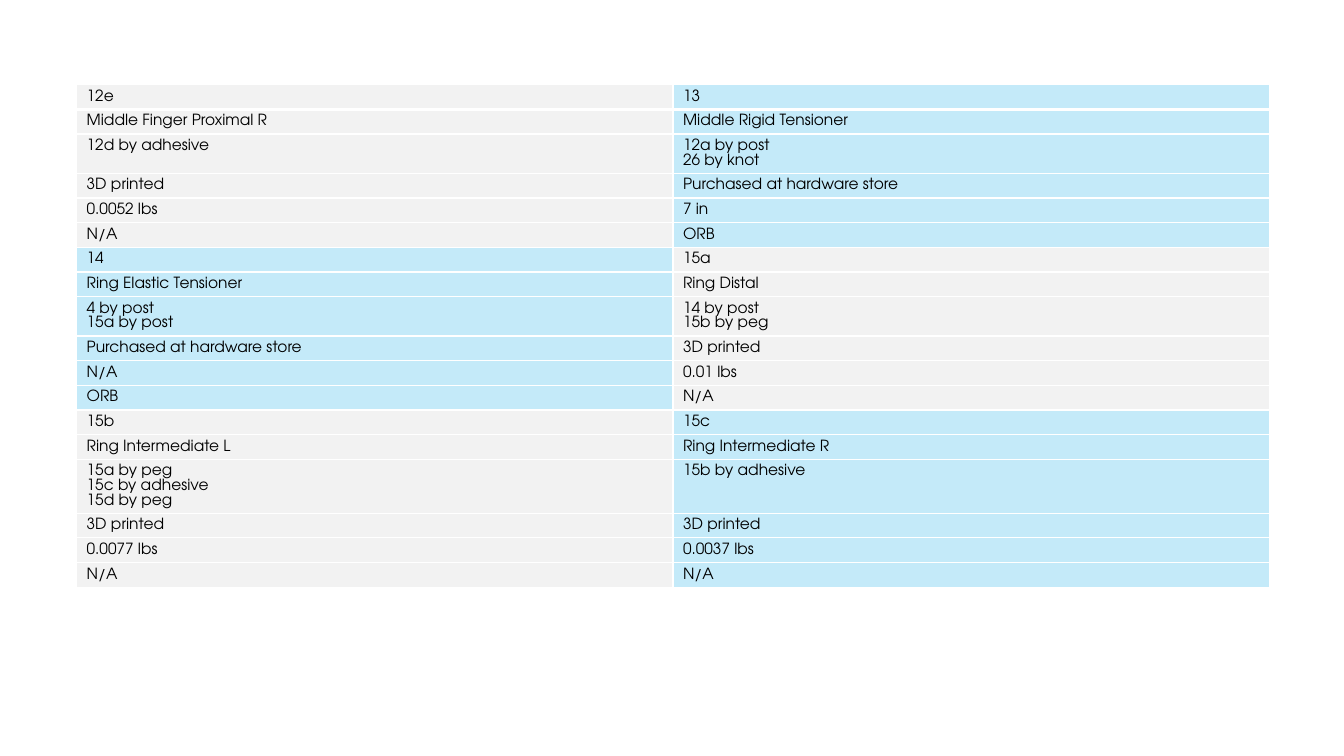
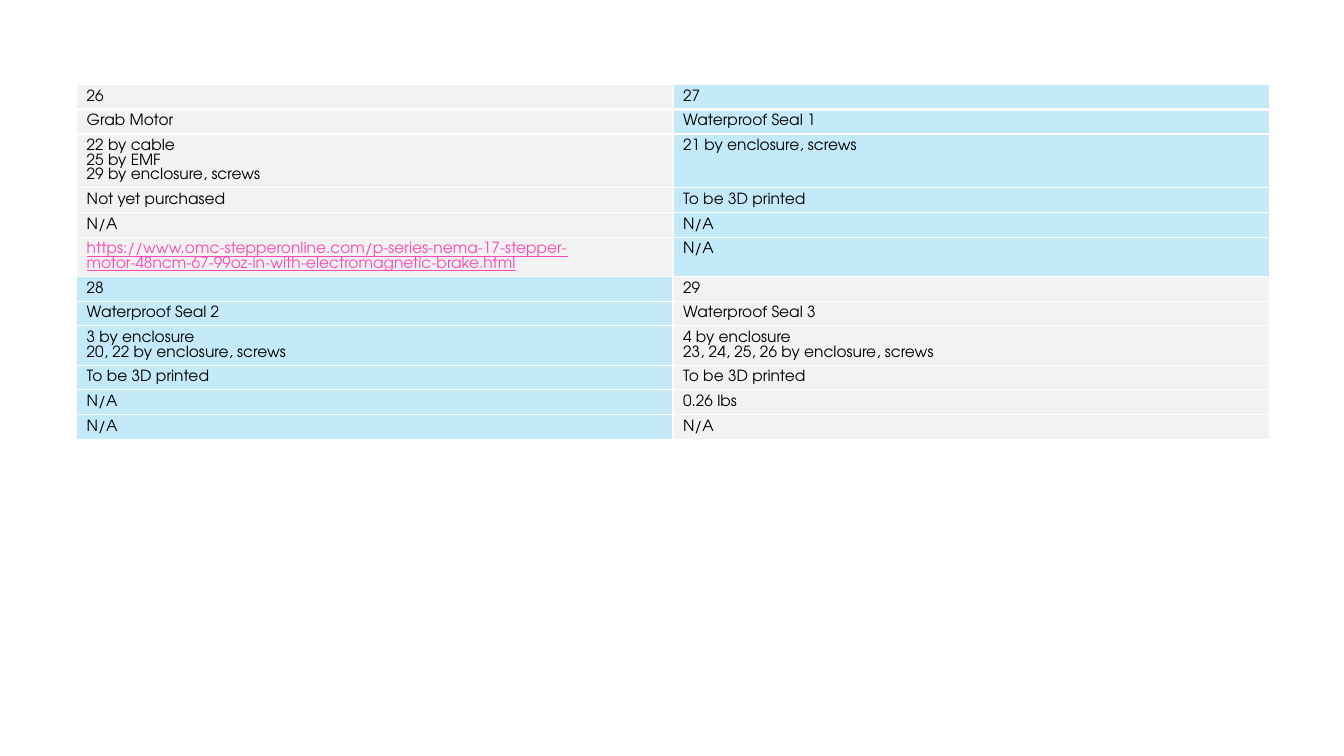
from dataclasses import dataclass

from pptx import Presentation
from pptx.dml.color import RGBColor as RGB
from pptx.oxml import parse_xml
from pptx.oxml.ns import nsdecls
from pptx.util import Inches, Pt


@dataclass(frozen=True)
class Theme:
    font: str = "TeX Gyre Adventor"
    size: float = 11
    lead: float = 10.4
    pad: float = 0.05
    text: str = "000000"
    link: str = "FB4AB6"
    rule: str = "FFFFFF"
    fills: tuple = ("F2F2F2", "C4EAF9")
    thin: float = 1
    thick: float = 3


THEME = Theme()
BOX = (0.76, 0.84, 11.83)  # left, top, width

# Each part: number, name, joints, source, weight or length, maker
FINGERS = [
    ("12e", "Middle Finger Proximal R", "12d by adhesive",
     "3D printed", "0.0052 lbs", "N/A"),
    ("13", "Middle Rigid Tensioner", "12a by post\n26 by knot",
     "Purchased at hardware store", "7 in", "ORB"),
    ("14", "Ring Elastic Tensioner", "4 by post\n15a by post",
     "Purchased at hardware store", "N/A", "ORB"),
    ("15a", "Ring Distal", "14 by post\n15b by peg",
     "3D printed", "0.01 lbs", "N/A"),
    ("15b", "Ring Intermediate L", "15a by peg\n15c by adhesive\n15d by peg",
     "3D printed", "0.0077 lbs", "N/A"),
    ("15c", "Ring Intermediate R", "15b by adhesive",
     "3D printed", "0.0037 lbs", "N/A"),
]
MOTOR_URL = ("https://www.omc-stepperonline.com/p-series-nema-17-stepper-"
             "motor-48ncm-67-99oz-in-with-electromagnetic-brake.html")
SEALS = [
    ("26", "Grab Motor", "22 by cable\n25 by EMF\n29 by enclosure, screws",
     "Not yet purchased", "N/A", MOTOR_URL),
    ("27", "Waterproof Seal 1", "21 by enclosure, screws",
     "To be 3D printed", "N/A", "N/A"),
    ("28", "Waterproof Seal 2", "3 by enclosure\n20, 22 by enclosure, screws",
     "To be 3D printed", "N/A", "N/A"),
    ("29", "Waterproof Seal 3",
     "4 by enclosure\n23, 24, 25, 26 by enclosure, screws",
     "To be 3D printed", "0.26 lbs", "N/A"),
]


def set_edges(cell, top, bottom):
    """Rule all four sides of a cell; top and bottom are widths in points."""
    props = cell._tc.get_or_add_tcPr()
    sides = {"L": THEME.thin, "R": THEME.thin, "T": top, "B": bottom}
    for side, width in sides.items():
        props.append(parse_xml(
            f'<a:ln{side} {nsdecls("a")} w="{Pt(width)}"><a:solidFill>'
            f'<a:srgbClr val="{THEME.rule}"/></a:solidFill></a:ln{side}>'))


def fill_cell(cell, text, fill):
    cell.fill.solid()
    cell.fill.fore_color.rgb = RGB.from_string(fill)
    cell.margin_top = cell.margin_bottom = Inches(THEME.pad)
    cell.text = text
    link = text.startswith("https:")
    for para in cell.text_frame.paragraphs:
        para.line_spacing = Pt(THEME.lead)
        font = para.font
        font.name, font.size = THEME.font, Pt(THEME.size)
        font.bold, font.underline = False, link
        font.color.rgb = RGB.from_string(THEME.link if link else THEME.text)


def row_lines(row):
    """Count the text lines of the tallest cell; a web address takes two."""
    return max(2 if text == MOTOR_URL else text.count("\n") + 1
               for text in row)


def add_parts(slide, parts, box):
    """Lay parts out two abreast, one field a row, in checkered blocks."""
    left, top, width = box
    rows = [(band, pair)
            for band in range(len(parts) // 2)
            for pair in zip(*parts[2 * band:2 * band + 2])]
    heights = [2 * THEME.pad + row_lines(pair) * THEME.lead / 72
               for _, pair in rows]
    table = slide.shapes.add_table(
        len(rows), 2, Inches(left), Inches(top),
        Inches(width), Inches(sum(heights))).table
    table.first_row = table.horz_banding = False
    for i, (band, pair) in enumerate(rows):
        table.rows[i].height = Inches(heights[i])
        upper = THEME.thick if i == 1 else THEME.thin
        lower = THEME.thick if i == 0 else THEME.thin
        for col, text in enumerate(pair):
            cell = table.cell(i, col)
            set_edges(cell, upper, lower)
            fill_cell(cell, text, THEME.fills[(band + col) % 2])


def main():
    deck = Presentation()
    deck.slide_width, deck.slide_height = Inches(13.33), Inches(7.5)
    for parts in (FINGERS, SEALS):
        add_parts(deck.slides.add_slide(deck.slide_layouts[6]), parts, BOX)
    deck.save("out.pptx")


if __name__ == "__main__":
    main()
